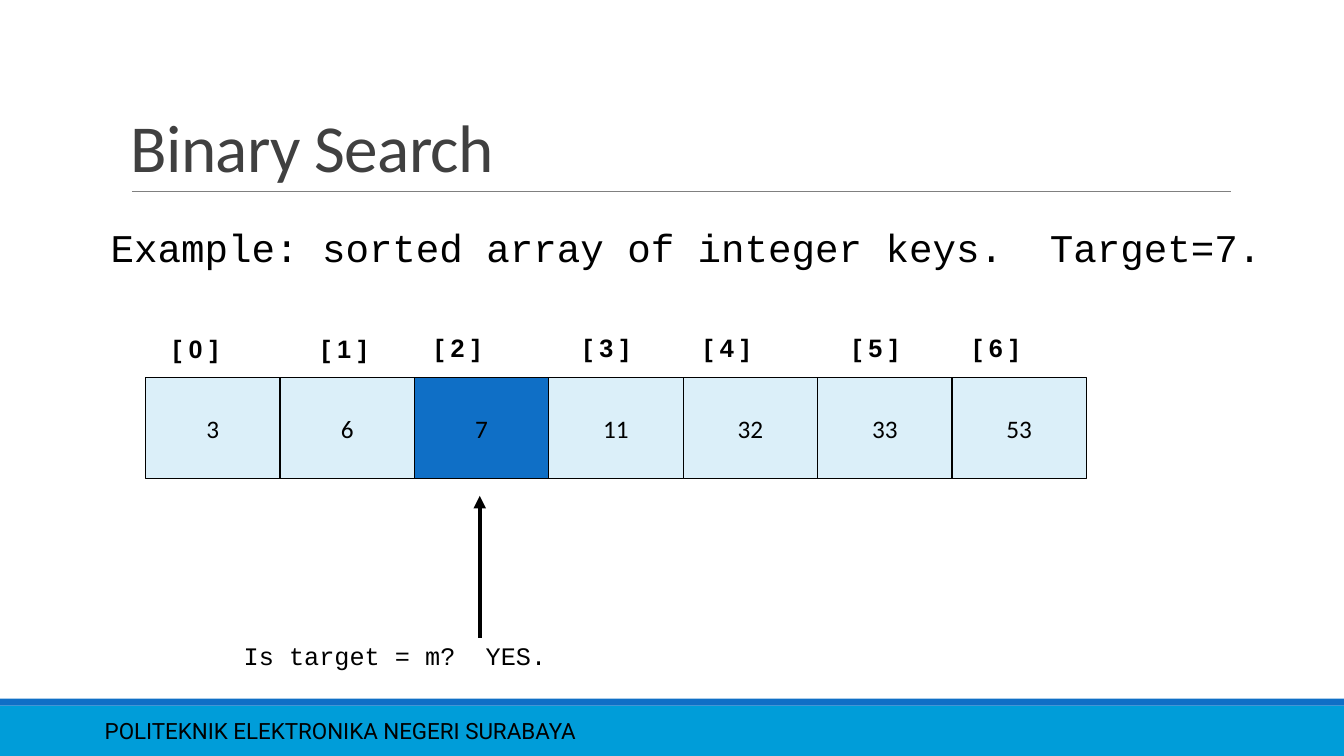
from dataclasses import dataclass

from lxml.etree import SubElement
from pptx import Presentation
from pptx.dml.color import RGBColor
from pptx.enum.shapes import MSO_CONNECTOR as Link, MSO_SHAPE as Form
from pptx.enum.text import MSO_ANCHOR as Anchor, PP_ALIGN as Align
from pptx.oxml.ns import qn
from pptx.util import Pt

BLACK = RGBColor(0x00, 0x00, 0x00)
DARK = RGBColor(0x40, 0x40, 0x40)
GREY = RGBColor(0x80, 0x80, 0x80)
BLUE = RGBColor(0x0F, 0x6F, 0xC6)
CYAN = RGBColor(0x00, 0x9D, 0xD9)
PALE = RGBColor(0xDB, 0xEF, 0xF9)

KEYS = (3, 6, 7, 11, 32, 33, 53)
FOUND = 2
CELL = 96
PAIRS = (116.64, 303.84, 496.08, 688.32)
SHIFT = 105.84


@dataclass
class Label:
    text: str
    left: float
    top: float
    width: float
    height: float
    size: float
    font: str
    color: RGBColor = BLACK
    bold: bool = False
    align: Align = Align.LEFT
    anchor: Anchor = Anchor.TOP
    wrap: bool = False
    leading: float = 1.0
    spacing: int = 0


@dataclass
class Box:
    left: float
    top: float
    width: float
    height: float
    fill: RGBColor
    text: str = ""


@dataclass
class Line:
    left: float
    top: float
    right: float
    bottom: float
    color: RGBColor
    weight: float
    arrow: bool = False


def write(shape, item: Label) -> None:
    frame = shape.text_frame
    frame.word_wrap = item.wrap
    frame.vertical_anchor = item.anchor
    par = frame.paragraphs[0]
    par.alignment = item.align
    par.line_spacing = item.leading
    run = par.add_run()
    run.text = item.text
    font = run.font
    font.name = item.font
    font.size = Pt(item.size)
    font.bold = item.bold
    font.color.rgb = item.color
    if item.spacing:
        font._element.set("spc", str(item.spacing))


def add_label(slide, item: Label) -> None:
    shape = slide.shapes.add_textbox(
        Pt(item.left), Pt(item.top), Pt(item.width), Pt(item.height))
    write(shape, item)


def add_box(slide, box: Box) -> None:
    shape = slide.shapes.add_shape(
        Form.RECTANGLE, Pt(box.left), Pt(box.top), Pt(box.width), Pt(box.height))
    shape.shadow.inherit = False
    shape.fill.solid()
    shape.fill.fore_color.rgb = box.fill
    if not box.text:
        shape.line.fill.background()
        return
    shape.line.color.rgb = BLACK
    shape.line.width = Pt(0.75)
    write(shape, Label(box.text, box.left, box.top, box.width, box.height, 18,
                       "Calibri", align=Align.CENTER, anchor=Anchor.MIDDLE))


def add_line(slide, line: Line) -> None:
    link = slide.shapes.add_connector(
        Link.STRAIGHT, Pt(line.left), Pt(line.top), Pt(line.right), Pt(line.bottom))
    link.line.color.rgb = line.color
    link.line.width = Pt(line.weight)
    if line.arrow:
        SubElement(link.line._get_or_add_ln(), qn("a:headEnd"), type="triangle")
    SubElement(link._element.spPr, qn("a:effectLst"))


def add_array(slide) -> None:
    for pos, key in enumerate(KEYS):
        fill = BLUE if pos == FOUND else PALE
        add_box(slide, Box(104 + CELL * pos, 270, CELL, 72, fill, str(key)))
        pair, odd = divmod(pos, 2)
        top = 234.72 if pair == 0 else 234
        align = Align.CENTER if odd else Align.LEFT
        add_label(slide, Label(f"[ {pos} ]", PAIRS[pair] + SHIFT * odd, top,
                               46.8, 28.8, 18, "Arial", bold=True, align=align))


def main() -> None:
    deck = Presentation()
    deck.slide_width = Pt(960)
    deck.slide_height = Pt(540)
    slide = deck.slides.add_slide(deck.slide_layouts[6])
    add_box(slide, Box(0, 504, 960, 36, CYAN))
    add_box(slide, Box(0, 499, 960, 5, BLUE))
    add_line(slide, Line(94.3, 136.8, 879, 136.8, GREY, 0.5))
    add_label(slide, Label("POLITEKNIK ELEKTRONIKA NEGERI SURABAYA", 67.7, 507.6,
                           605.5, 28.8, 16, "Roboto", anchor=Anchor.MIDDLE, wrap=True))
    add_label(slide, Label("Binary Search", 86.4, 22.3, 792, 114.5, 48, "Calibri", DARK,
                           anchor=Anchor.BOTTOM, wrap=True, leading=0.85, spacing=-50))
    add_label(slide, Label("Example: sorted array of integer keys.  Target=7.",
                           72, 156.2, 843.1, 244.8, 28, "Courier New"))
    add_array(slide)
    add_line(slide, Line(342.7, 354.2, 342.7, 455.8, BLACK, 3, True))
    add_label(slide, Label("Is target = m?  YES.", 167, 453.6, 231.8, 28.8, 18,
                           "Courier New"))
    deck.save("out.pptx")


if __name__ == "__main__":
    main()
